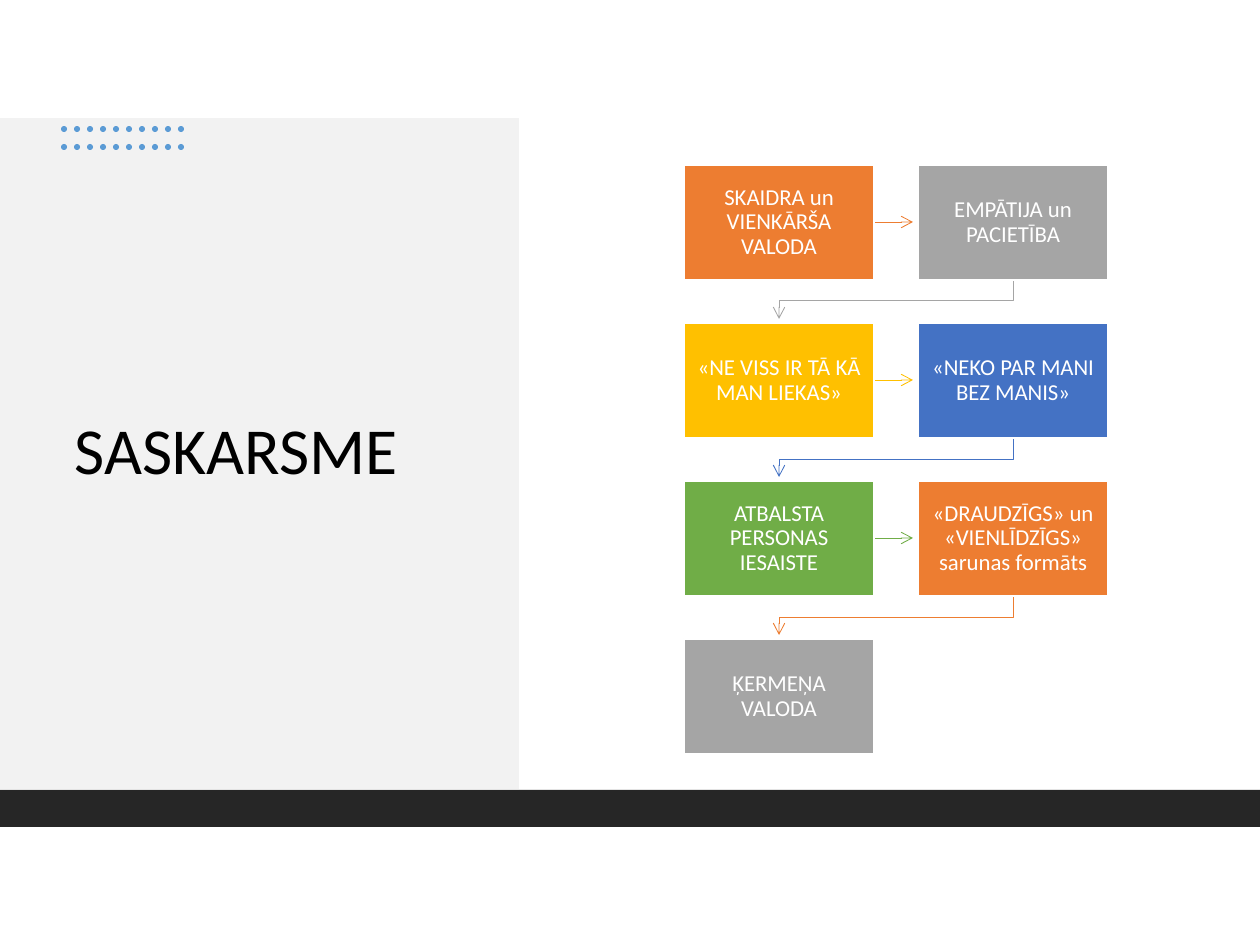
import pptx
import pptx.dml.color
import pptx.enum.shapes
import pptx.enum.text
import pptx.oxml
import pptx.oxml.ns
import pptx.util

PX = 914400 / 126
RECT = pptx.enum.shapes.MSO_SHAPE.RECTANGLE
OVAL = pptx.enum.shapes.MSO_SHAPE.OVAL
BOX_LEFT, BOX_TOP, BOX_WIDTH, BOX_HEIGHT = 684, 165, 190, 115
COLUMN_STEP, ROW_STEP = 234, 158
STEPS = [
    ("SKAIDRA un VIENKĀRŠA VALODA", "ED7D31"),
    ("EMPĀTIJA un PACIETĪBA", "A5A5A5"),
    ("«NE VISS IR TĀ KĀ MAN LIEKAS»", "FFC000"),
    ("«NEKO PAR MANI BEZ MANIS»", "4472C4"),
    ("ATBALSTA PERSONAS IESAISTE", "70AD47"),
    ("«DRAUDZĪGS» un «VIENLĪDZĪGS» sarunas formāts", "ED7D31"),
    ("ĶERMEŅA VALODA", "A5A5A5"),
]


def px(length):
    """Turn pixels into EMU."""
    return pptx.util.Emu(round(length * PX))


def rgb(value):
    """Turn a hex string into a colour."""
    return pptx.dml.color.RGBColor.from_string(value)


def add_filled(slide, kind, left, top, width, height, color):
    """Add a flat preset shape without an outline."""
    shape = slide.shapes.add_shape(kind, px(left), px(top), px(width), px(height))
    shape.shadow.inherit = False
    shape.fill.solid()
    shape.fill.fore_color.rgb = rgb(color)
    shape.line.fill.background()
    return shape


def format_text(frame, text, size, color, alignment):
    """Write one paragraph, vertically centred."""
    frame.word_wrap = True
    frame.auto_size = pptx.enum.text.MSO_AUTO_SIZE.NONE
    frame.vertical_anchor = pptx.enum.text.MSO_ANCHOR.MIDDLE
    frame.text = text
    paragraph = frame.paragraphs[0]
    paragraph.alignment = alignment
    paragraph.line_spacing = 0.9
    paragraph.font.size = pptx.util.Pt(size)
    paragraph.font.name = "Calibri"
    paragraph.font.color.rgb = rgb(color)


def add_title(slide, text):
    """Place the title on its grey panel."""
    title = slide.shapes.title
    title.left, title.top, title.width, title.height = map(px, (62, 243, 401, 420))
    format_text(title.text_frame, text, 37.5, "000000", pptx.enum.text.PP_ALIGN.LEFT)
    panel = add_filled(slide, RECT, 0, 118, 519, 671, "F2F2F2")
    title.element.addprevious(panel.element)


def add_dots(slide):
    """Add the two rows of decorative dots."""
    for row in range(2):
        for column in range(10):
            add_filled(slide, OVAL, 61 + 13 * column, 126 + 18 * row, 6, 6, "5B9BD5")


def add_step(slide, left, top, text, color):
    """Add one box of the process."""
    box = add_filled(slide, RECT, left, top, BOX_WIDTH, BOX_HEIGHT, color)
    box.line.color.rgb = rgb("FFFFFF")
    box.line.width = pptx.util.Pt(1)
    frame = box.text_frame
    frame.margin_left = frame.margin_right = px(9)
    frame.margin_top = frame.margin_bottom = px(10)
    format_text(frame, text, 13, "FFFFFF", pptx.enum.text.PP_ALIGN.CENTER)


def style_arrow(arrow, color):
    """Give a path a thin line with an open arrowhead at its end."""
    arrow.line.color.rgb = rgb(color)
    arrow.line.width = pptx.util.Pt(0.5)
    line = arrow.line._get_or_add_ln()
    head = pptx.oxml.parse_xml(
        f'<a:tailEnd {pptx.oxml.ns.nsdecls("a")} type="arrow"/>')
    line.append(head)


def add_across_arrow(slide, left, top, color):
    """Link a left box to the box on its right."""
    start, middle = left + BOX_WIDTH, top + BOX_HEIGHT // 2
    arrow = slide.shapes.add_connector(
        pptx.enum.shapes.MSO_CONNECTOR.STRAIGHT,
        px(start), px(middle), px(start + 39), px(middle))
    arrow.element.spPr.append(
        pptx.oxml.parse_xml(f'<a:effectLst {pptx.oxml.ns.nsdecls("a")}/>'))
    style_arrow(arrow, color)


def add_return_arrow(slide, left, top, color):
    """Link a right box to the left box of the next row."""
    start, bottom = left + BOX_WIDTH // 2, top + BOX_HEIGHT
    end = start - COLUMN_STEP
    builder = slide.shapes.build_freeform(px(start), px(bottom))
    corners = [(start, bottom + 21), (end, bottom + 21), (end, bottom + 39)]
    builder.add_line_segments([(px(x), px(y)) for x, y in corners], close=False)
    arrow = builder.convert_to_shape()
    arrow.shadow.inherit = False
    arrow.fill.background()
    style_arrow(arrow, color)


def add_process(slide):
    """Lay the steps out in two columns and link them in order."""
    for index, (text, color) in enumerate(STEPS):
        row, column = divmod(index, 2)
        left = BOX_LEFT + column * COLUMN_STEP
        top = BOX_TOP + row * ROW_STEP
        if index < len(STEPS) - 1:
            add_arrow = add_return_arrow if column else add_across_arrow
            add_arrow(slide, left, top, color)
        add_step(slide, left, top, text, color)


def main():
    """Build and save the slide."""
    deck = pptx.Presentation()
    deck.slide_width, deck.slide_height = px(1260), px(945)
    slide = deck.slides.add_slide(deck.slide_layouts[5])
    add_title(slide, "SASKARSME")
    add_dots(slide)
    add_filled(slide, RECT, 0, 790, 1260, 37, "262626")
    add_process(slide)
    deck.save("out.pptx")


if __name__ == "__main__":
    main()
